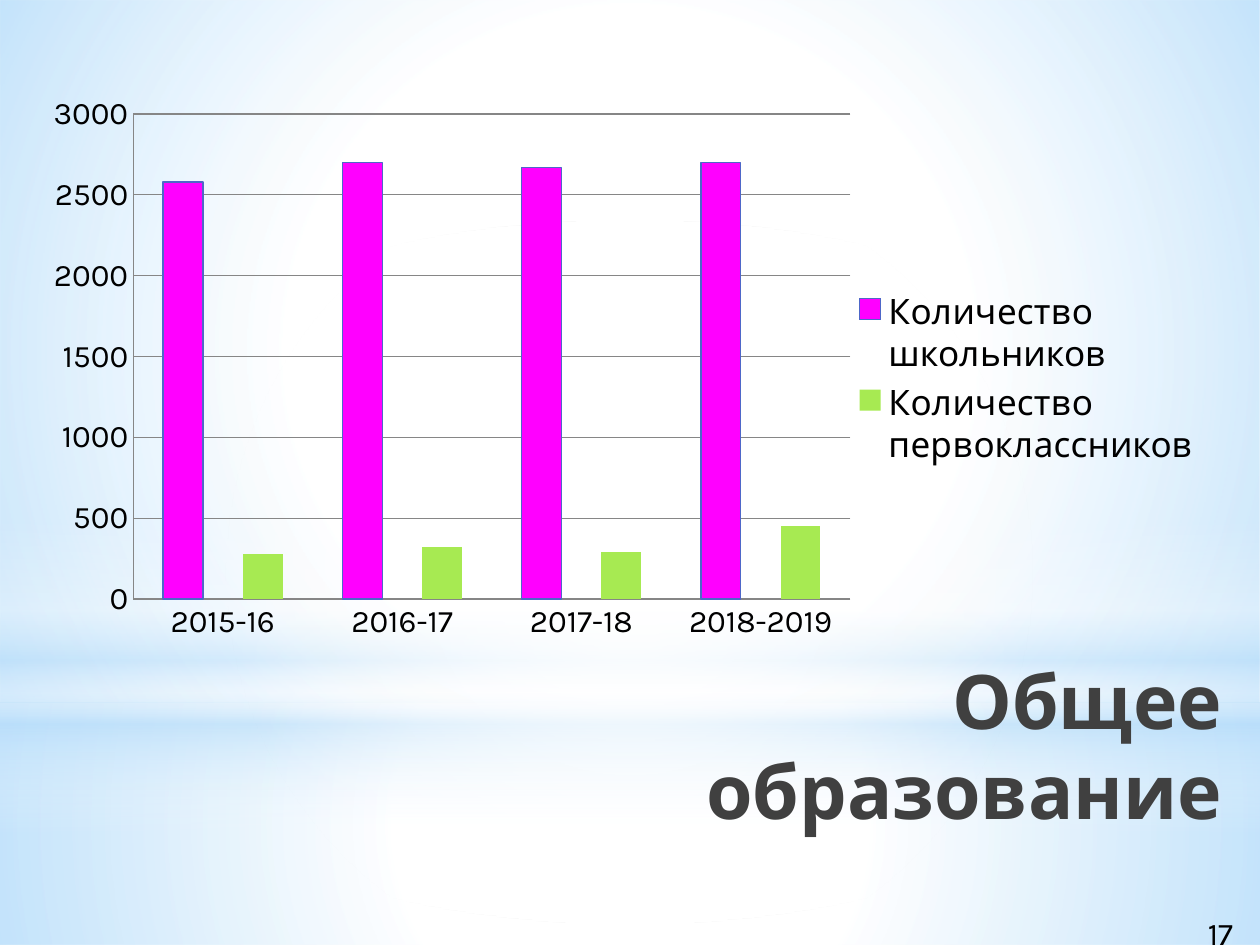
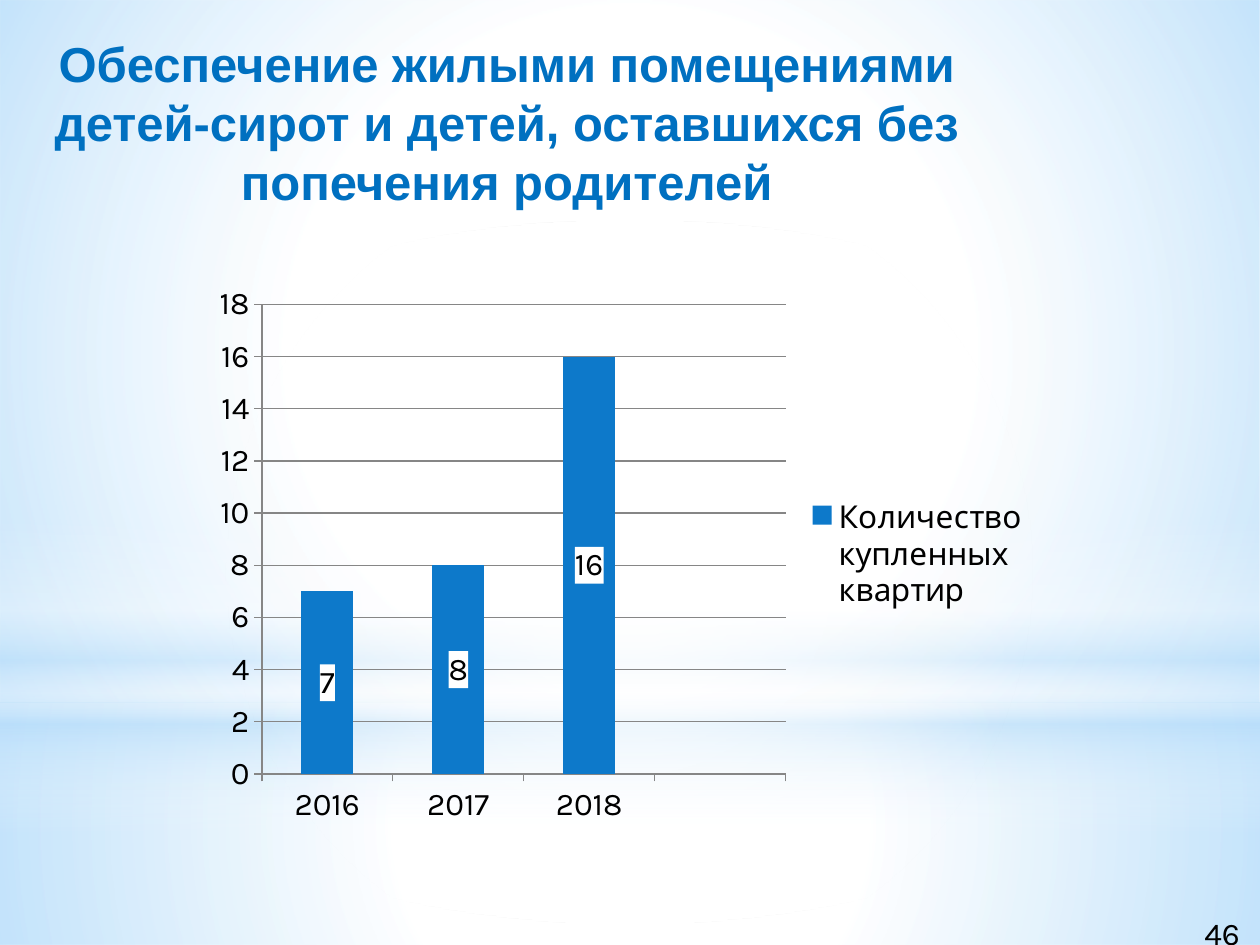
from pptx import Presentation
from pptx.chart.data import CategoryChartData
from pptx.dml.color import RGBColor
from pptx.enum.chart import (XL_CHART_TYPE, XL_LABEL_POSITION,
                             XL_LEGEND_POSITION, XL_TICK_MARK)
from pptx.enum.shapes import MSO_SHAPE
from pptx.enum.text import MSO_ANCHOR, MSO_AUTO_SIZE, PP_ALIGN
from pptx.oxml import parse_xml
from pptx.oxml.ns import nsdecls
from pptx.util import Cm, Pt

WHITE, SKY, BLACK, GREY = "FFFFFF", "B4DCFA", "000000", "868686"
FONT = "Karla"
CENTRE = '<a:path path="circle"><a:fillToRect l="50000" t="50000" r="50000" b="50000"/></a:path>'
DOWN = '<a:lin ang="5400000" scaled="0"/>'

# Preset shape, box in cm, direction, stops of (place, colour, opacity)
BANDS = [
    (MSO_SHAPE.RECTANGLE, (0, 14.17, 25.4, 4.88), CENTRE,
     [(0, WHITE, 91), (37, WHITE, 76), (100, SKY, 79)]),
    (MSO_SHAPE.RECTANGLE, (0, 0, 25.4, 14.17), CENTRE,
     [(0, WHITE, 89), (48, WHITE, 62), (100, SKY, 79)]),
    (MSO_SHAPE.RECTANGLE, (0, 10.46, 25.4, 6.35), DOWN,
     [(0, WHITE, 0), (29, WHITE, 30), (45, SKY, 40),
      (55, WHITE, 26), (65, SKY, 60), (100, WHITE, 0)]),
    (MSO_SHAPE.OVAL, (0, 4.45, 25.4, 14.17), CENTRE,
     [(0, WHITE, 100), (56, WHITE, 0)]),
]


def rgb(code):
    return RGBColor.from_string(code)


def cms(box):
    return [Cm(n) for n in box]


def blend(stops, way):
    """Return a gradient fill element."""
    marks = "".join(
        f'<a:gs pos="{place * 1000}"><a:srgbClr val="{code}">'
        f'<a:alpha val="{alpha * 1000}"/></a:srgbClr></a:gs>'
        for place, code, alpha in stops)
    return parse_xml(f'<a:gradFill {nsdecls("a")} rotWithShape="1">'
                     f'<a:gsLst>{marks}</a:gsLst>{way}</a:gradFill>')


class Deck:
    def __init__(self):
        self.prs = Presentation()
        self.prs.slide_width, self.prs.slide_height = Cm(25.4), Cm(19.05)
        self.slide = None

    def start(self):
        self.slide = self.prs.slides.add_slide(self.prs.slide_layouts[5])

    def bands(self):
        """Draw the backdrop and hand it to the slide master."""
        tree = self.prs.slide_master.shapes.element
        for i, (kind, box, way, stops) in enumerate(BANDS):
            band = self.slide.shapes.add_shape(kind, *cms(box))
            band.name = f"Band {i + 1}"
            band.shadow.inherit = False
            band.line.fill.background()
            band.element.spPr.insert(2, blend(stops, way))
            band.element.nvSpPr.cNvPr.id = 100 + i
            tree.insert(2 + i, band.element)

    def style(self, font, size, color=BLACK, name=FONT, bold=False):
        font.name, font.size, font.bold = name, Pt(size), bold
        font.color.rgb = rgb(color)

    def title(self, text, box, align, anchor, top=0.13, **look):
        head = self.slide.shapes.title
        head.left, head.top, head.width, head.height = cms(box)
        frame = head.text_frame
        frame.text = text
        frame.word_wrap = True
        frame.auto_size = MSO_AUTO_SIZE.NONE
        frame.vertical_anchor = anchor
        frame.margin_top = Cm(top)
        line = frame.paragraphs[0]
        line.alignment = align
        self.style(line.runs[0].font, bold=True, **look)

    def number(self, text, left):
        box = self.slide.shapes.add_textbox(*cms((left, 18.3, 25.4 - left, 1.02)))
        frame = box.text_frame
        frame.text = text
        frame.word_wrap = True
        frame.auto_size = MSO_AUTO_SIZE.SHAPE_TO_FIT_TEXT
        self.style(frame.paragraphs[0].runs[0].font, 18)

    def chart(self, kind, box, cats, rows, tick, top, step, key=18):
        """Add a column chart; rows hold name, values, fill and line colour."""
        data = CategoryChartData()
        data.categories = cats
        for name, vals, *_ in rows:
            data.add_series(name, vals)
        chart = self.slide.shapes.add_chart(kind, *cms(box), data).chart
        chart.has_title = False
        self.style(chart.font, 18)
        chart.has_legend = True
        chart.legend.position = XL_LEGEND_POSITION.RIGHT
        chart.legend.include_in_layout = False
        self.style(chart.legend.font, key)

        for axis in (chart.category_axis, chart.value_axis):
            axis.major_tick_mark = tick
            axis.minor_tick_mark = XL_TICK_MARK.NONE
            axis.format.line.color.rgb = rgb(GREY)
        scale = chart.value_axis
        scale.minimum_scale, scale.maximum_scale = 0, top
        scale.major_unit = step
        scale.has_major_gridlines = True
        scale.major_gridlines.format.line.color.rgb = rgb(GREY)

        plot = chart.plots[0]
        plot.gap_width = 150
        plot.vary_by_categories = False
        for row, (_, _, fill, edge) in zip(plot.series, rows):
            row.format.fill.solid()
            row.format.fill.fore_color.rgb = rgb(fill)
            row.invert_if_negative = False
            if edge:
                row.format.line.color.rgb = rgb(edge)
                row.format.line.width = Pt(0.75)
            else:
                row.format.line.fill.background()
        return chart

    def place(self, chart, box):
        """Fix the inner plot area, given as shares of the chart."""
        area = chart.element.xpath(".//c:plotArea")[0]
        for old in area.xpath("c:layout"):
            area.remove(old)
        spots = "".join(f'<c:{tag} val="{n}"/>' for tag, n in zip("xywh", box))
        area.insert(0, parse_xml(
            f'<c:layout {nsdecls("c")}><c:manualLayout><c:layoutTarget val="inner"/>'
            f'<c:xMode val="edge"/><c:yMode val="edge"/>{spots}'
            '</c:manualLayout></c:layout>'))

    def unlist(self, chart, index):
        """Drop one series from the legend."""
        chart.element.xpath(".//c:legendPos")[0].addnext(parse_xml(
            f'<c:legendEntry {nsdecls("c")}><c:idx val="{index}"/>'
            '<c:delete val="1"/></c:legendEntry>'))

    def labels(self, chart):
        """Show values on white in the middle of the columns."""
        tags = chart.plots[0].series[0].data_labels
        tags.show_value = True
        tags.position = XL_LABEL_POSITION.CENTER
        self.style(tags.font, 18)
        chart.element.xpath(".//c:dLbls/c:txPr")[0].addprevious(parse_xml(
            f'<c:spPr {nsdecls("c", "a")}><a:solidFill>'
            f'<a:srgbClr val="{WHITE}"/></a:solidFill></c:spPr>'))


def school(deck):
    deck.start()
    deck.bands()
    chart = deck.chart(
        XL_CHART_TYPE.COLUMN_CLUSTERED, (0.79, 1.93, 23.7, 11.4),
        ["2015-16", "2016-17", "2017-18", "2018-2019"],
        [("Количество школьников", (2580, 2700, 2670, 2700), "FF00FF", "4E67C8"),
         ("Series 2", (None,) * 4, "5ECCF3", "0070C0"),
         ("Количество первоклассников", (280, 320, 290, 450), "A7EA52", None)],
        XL_TICK_MARK.NONE, 3000, 500, key=20)
    deck.place(chart, (0.08, 0.03, 0.61, 0.86))
    deck.unlist(chart, 1)
    deck.title("Общее образование", (13.69, 12.93, 11.2, 5.41),
               PP_ALIGN.RIGHT, MSO_ANCHOR.TOP, top=0.25, size=43, color="404040")
    deck.number("17", 24.1)


def homes(deck):
    deck.start()
    deck.title("Обеспечение жилыми помещениями детей-сирот и детей, "
               "оставшихся без попечения родителей", (0.51, 0.33, 19.41, 4.24),
               PP_ALIGN.CENTER, MSO_ANCHOR.MIDDLE,
               size=28, color="0070C0", name="Arial")
    chart = deck.chart(
        XL_CHART_TYPE.COLUMN_STACKED, (4.09, 5.54, 16.94, 11.28),
        ["2016", "2017", "2018", ""],
        [("Количество купленных квартир", (7, 8, 16, None), "0D79CA", None)],
        XL_TICK_MARK.OUTSIDE, 18, 2)
    chart.plots[0].overlap = 100
    deck.labels(chart)
    deck.number("46", 24.03)


def main():
    deck = Deck()
    school(deck)
    homes(deck)
    deck.prs.save("out.pptx")


if __name__ == "__main__":
    main()
